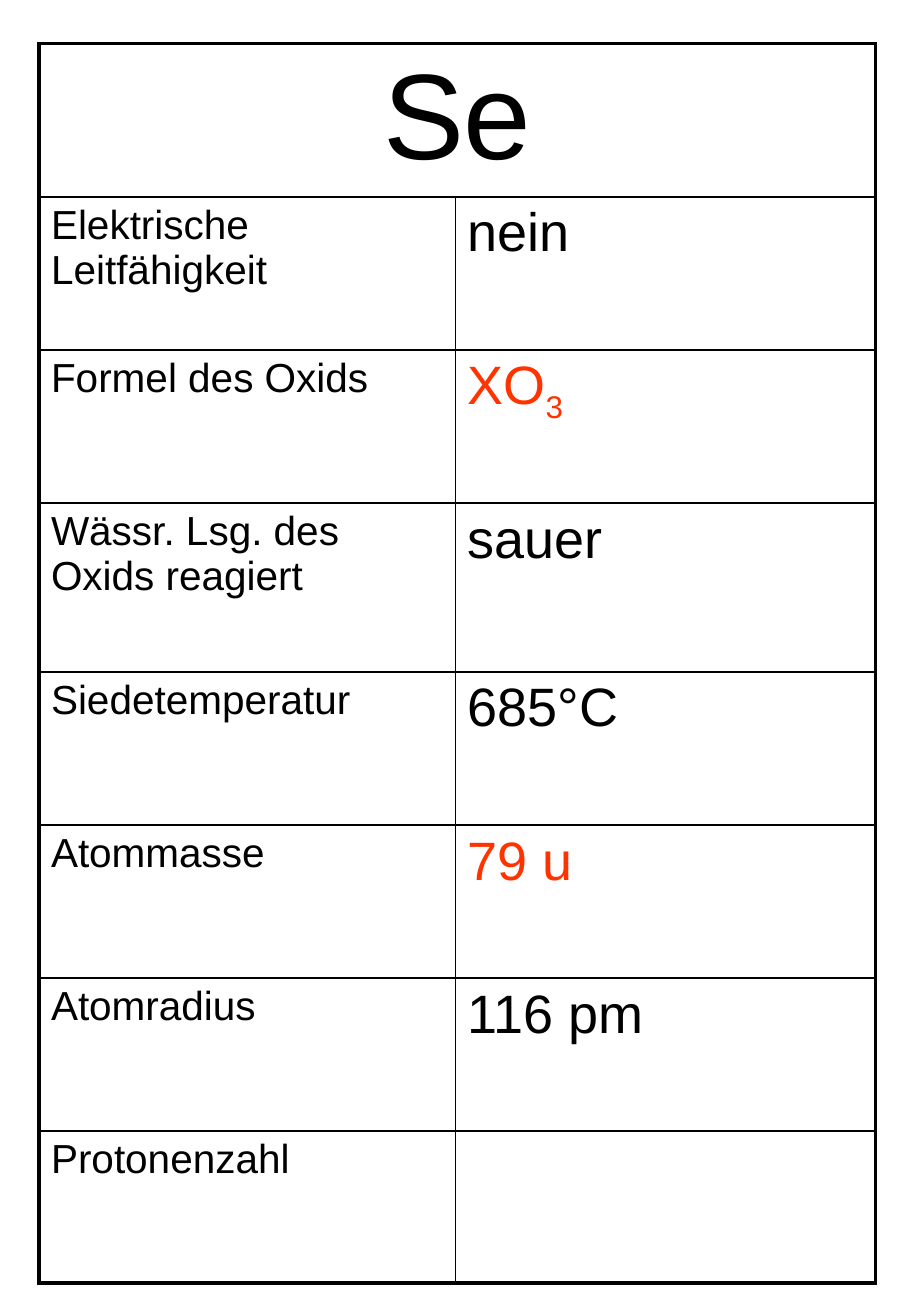
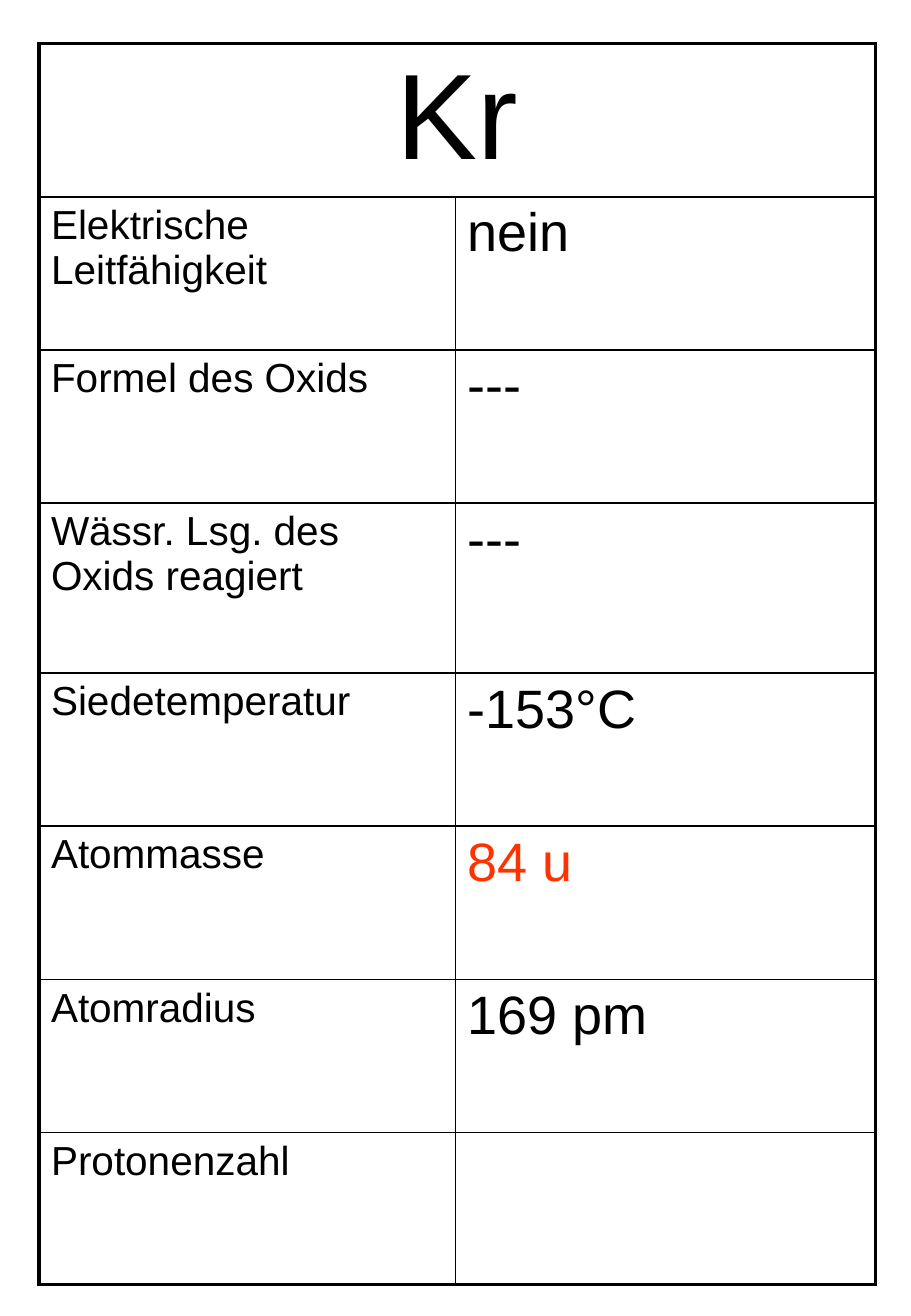
import pptx
import pptx.dml.color
import pptx.enum.text
import pptx.oxml
import pptx.oxml.ns
import pptx.util

PX = 9144  # EMU per px, 100 px to the inch
BLACK, RED = "000000", "FF3300"
FONT = "Arial"
THICK, THIN = 2.25, 1
LEFT, TOP = 32, 36
COLUMNS = (343, 346)
ROW, LAST_ROW = 126, 125
REACTION_ROW = 3
LABELS = (
    "Elektrische Leitfähigkeit",
    "Formel des Oxids",
    "Wässr. Lsg. des Oxids reagiert",
    "Siedetemperatur",
    "Atommasse",
    "Atomradius",
    "Protonenzahl",
)


def px(n):
    return pptx.util.Emu(n * PX)


def rgb(color):
    return pptx.dml.color.RGBColor.from_string(color)


def set_borders(cell, **widths):
    """Draw black cell edges; widths in points, keyed L, R, T, B."""
    tcPr = cell._tc.get_or_add_tcPr()
    for side, width in widths.items():
        tcPr.append(pptx.oxml.parse_xml(
            f'<a:ln{side} {pptx.oxml.ns.nsdecls("a")} w="{pptx.util.Pt(width)}">'
            f'<a:solidFill><a:srgbClr val="{BLACK}"/></a:solidFill></a:ln{side}>'))


def write(cell, text, size, color=BLACK, subscript="", centred=False):
    p = cell.text_frame.paragraphs[0]
    p.font.name, p.font.size = FONT, pptx.util.Pt(size)
    p.font.color.rgb = rgb(color)
    if centred:
        p.alignment = pptx.enum.text.PP_ALIGN.CENTER
    if text:
        p.add_run().text = text
    if subscript:
        r = p.add_run()
        r.text = subscript
        r._r.get_or_add_rPr().set("baseline", "-25000")


def add_element_card(prs, symbol, values, reaction_height):
    """Add a slide with one table; each value holds the arguments after the size in write()."""
    s = prs.slides.add_slide(prs.slide_layouts[6])
    heights = [ROW] * len(LABELS) + [LAST_ROW]
    heights[REACTION_ROW] = reaction_height
    table = s.shapes.add_table(len(heights), len(COLUMNS), px(LEFT), px(TOP),
                               px(sum(COLUMNS)), px(sum(heights))).table
    table.first_row = table.horz_banding = False
    for column, width in zip(table.columns, COLUMNS):
        column.width = px(width)

    last = len(heights) - 1
    for i, height in enumerate(heights):
        table.rows[i].height = px(height)
        for j in range(len(COLUMNS)):
            cell = table.cell(i, j)
            set_borders(cell,
                        L=THICK if j == 0 else THIN,
                        R=THICK if j == 1 or i == 0 else THIN,
                        T=THICK if i == 0 else THIN,
                        B=THICK if i == last else THIN)
            cell.fill.background()

    title = table.cell(0, 0)
    title.merge(table.cell(0, 1))
    write(title, symbol, 72, centred=True)
    for i, (label, value) in enumerate(zip(LABELS, values), start=1):
        write(table.cell(i, 0), label, 24)
        text, *style = value
        write(table.cell(i, 1), text, 32, *style)


def main():
    prs = pptx.Presentation()
    prs.slide_width, prs.slide_height = px(750), px(1083)
    add_element_card(prs, "Se", [
        ("nein",), ("XO", RED, "3"), ("sauer",), ("685°C",),
        ("79 u", RED), ("116 pm",), ("",)], 139)
    add_element_card(prs, "Kr", [
        ("nein",), ("---",), ("---",), ("-153°C",),
        ("84 u", RED), ("169 pm",), ("",)], 140)
    prs.save("out.pptx")


if __name__ == "__main__":
    main()
